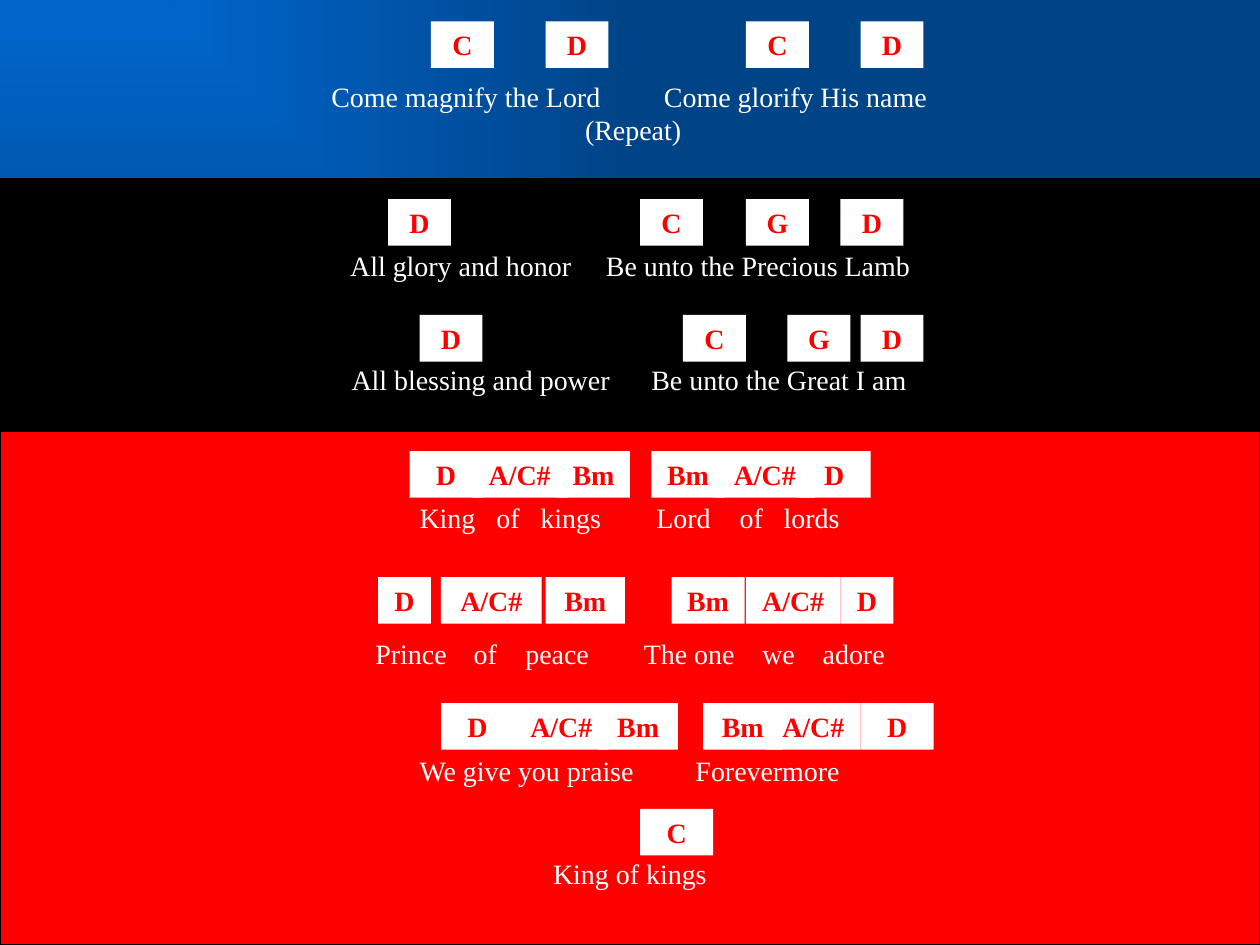
"""Builds a song slide with chord boxes above the lyrics."""
import lxml.etree
import pptx
import pptx.dml.color
import pptx.enum.shapes
import pptx.enum.text
import pptx.oxml
import pptx.oxml.ns
import pptx.util

Inches = pptx.util.Inches
RGB = pptx.dml.color.RGBColor.from_string
qn = pptx.oxml.ns.qn
RECT = pptx.enum.shapes.MSO_SHAPE.RECTANGLE
ALIGN = pptx.enum.text.PP_ALIGN

THEME = {
    "gradient": ["0066CC", "004488"],
    "verse": "000000",
    "chorus": "FF0000",
    "line": "000000",
    "chip": "FFFFFF",
    "chord": {"name": "Times New Roman", "size": pptx.util.Pt(16), "bold": True},
    "lyric": {"name": "Times New Roman", "size": pptx.util.Pt(16), "bold": False},
    "chord_color": "FF0000",
    "lyric_color": "FFFFFF",
}
WIDTH, ROW_H, LINE_H, SLACK = 10, 0.37, 0.27, 0.05

BANDS = [(1.42, 2, "verse"), (3.42, 4.08, "chorus")]

LYRICS = [
    (0.58, [(2.63, "Come magnify the Lord"), (5.27, "Come glorify His name")], "(Repeat)"),
    (1.92, [(2.78, "All glory and honor"), (4.81, "Be unto the Precious Lamb")], None),
    (2.83, [(2.79, "All blessing and power"), (5.17, "Be unto the Great I am")], None),
    (3.92, [(3.33, "King"), (3.94, "of"), (4.29, "kings"),
            (5.21, "Lord"), (5.87, "of"), (6.22, "lords")], None),
    (5, [(2.98, "Prince"), (3.76, "of"), (4.17, "peace"),
         (5.11, "The one"), (6.05, "we"), (6.53, "adore")], None),
    (5.93, [(3.33, "We give you praise"), (5.52, "Forevermore")], None),
    (6.75, [(4.39, "King of kings")], None),
]

CHORDS = [
    (0.17, [("C", 3.42, 0.5), ("D", 4.33, 0.5), ("C", 5.92, 0.5), ("D", 6.83, 0.5)]),
    (1.58, [("D", 3.08, 0.5), ("C", 5.08, 0.5), ("G", 5.92, 0.5), ("D", 6.67, 0.5)]),
    (2.5, [("D", 3.33, 0.5), ("C", 5.42, 0.5), ("G", 6.25, 0.5), ("D", 6.83, 0.5)]),
    (3.58, [("D", 3.25, 0.58), ("A/C#", 3.75, 0.75), ("Bm", 4.42, 0.58),
            ("Bm", 5.17, 0.58), ("A/C#", 5.67, 0.8), ("D", 6.33, 0.58)]),
    (4.58, [("D", 3, 0.42), ("A/C#", 3.5, 0.8), ("Bm", 4.33, 0.63),
            ("D", 6.67, 0.42), ("Bm", 5.33, 0.58), ("A/C#", 5.92, 0.75)]),
    (5.58, [("D", 3.5, 0.58), ("A/C#", 4.08, 0.75), ("Bm", 4.75, 0.63),
            ("Bm", 5.58, 0.63), ("A/C#", 6.08, 0.75), ("D", 6.83, 0.58)]),
    (6.42, [("C", 5.08, 0.58)]),
]


def add_box(s, x, y, w, h, fill):
    sp = s.shapes.add_shape(RECT, Inches(x), Inches(y), Inches(w), Inches(h))
    sp.shadow.inherit = False
    sp.fill.solid()
    sp.fill.fore_color.rgb = RGB(THEME[fill])
    sp.line.fill.background()
    return sp


def write(p, text, style, align):
    p.alignment = align
    r = p.add_run()
    r.text = text
    for name, value in THEME[style].items():
        setattr(r.font, name, value)
    r.font.color.rgb = RGB(THEME[style + "_color"])


prs = pptx.Presentation()
prs.slide_width, prs.slide_height = Inches(WIDTH), Inches(7.5)
s = prs.slides.add_slide(prs.slide_layouts[6])

fill = s.background.fill
fill.gradient()
for stop, color in zip(fill.gradient_stops, THEME["gradient"]):
    stop.color.rgb = RGB(color)
grad = s.background._cSld.find(".//" + qn("a:gradFill"))
grad.remove(grad.find(qn("a:lin")))
shade = lxml.etree.SubElement(grad, qn("a:path"), path="rect")
lxml.etree.SubElement(shade, qn("a:fillToRect"), r="100000", b="100000")

for y, h, band in BANDS:
    sp = add_box(s, 0, y, WIDTH, h, band)
    sp.line.color.rgb = RGB(THEME["line"])
    sp.line.width = pptx.util.Pt(0.75)

for y, phrases, refrain in LYRICS:
    left = phrases[0][0]
    h = ROW_H + LINE_H if refrain else ROW_H
    tf = s.shapes.add_textbox(0, Inches(y), Inches(WIDTH), Inches(h)).text_frame
    tf.word_wrap = True
    tf.margin_left, tf.margin_right = Inches(left), Inches(left - SLACK)
    p = tf.paragraphs[0]
    write(p, "\t".join(text for x, text in phrases), "lyric", ALIGN.LEFT)
    tabs = lxml.etree.SubElement(p._p.get_or_add_pPr(), qn("a:tabLst"))
    for x, text in phrases[1:]:
        lxml.etree.SubElement(tabs, qn("a:tab"), pos=str(Inches(x - left)), algn="l")
    if refrain:
        write(tf.add_paragraph(), refrain, "lyric", ALIGN.CENTER)

for y, chips in CHORDS:
    for chord, x, w in chips:
        tf = add_box(s, x, y, w, ROW_H, "chip").text_frame
        tf.vertical_anchor = pptx.enum.text.MSO_ANCHOR.TOP
        tf.auto_size = pptx.enum.text.MSO_AUTO_SIZE.SHAPE_TO_FIT_TEXT
        write(tf.paragraphs[0], chord, "chord", ALIGN.CENTER)

prs.save("out.pptx")
